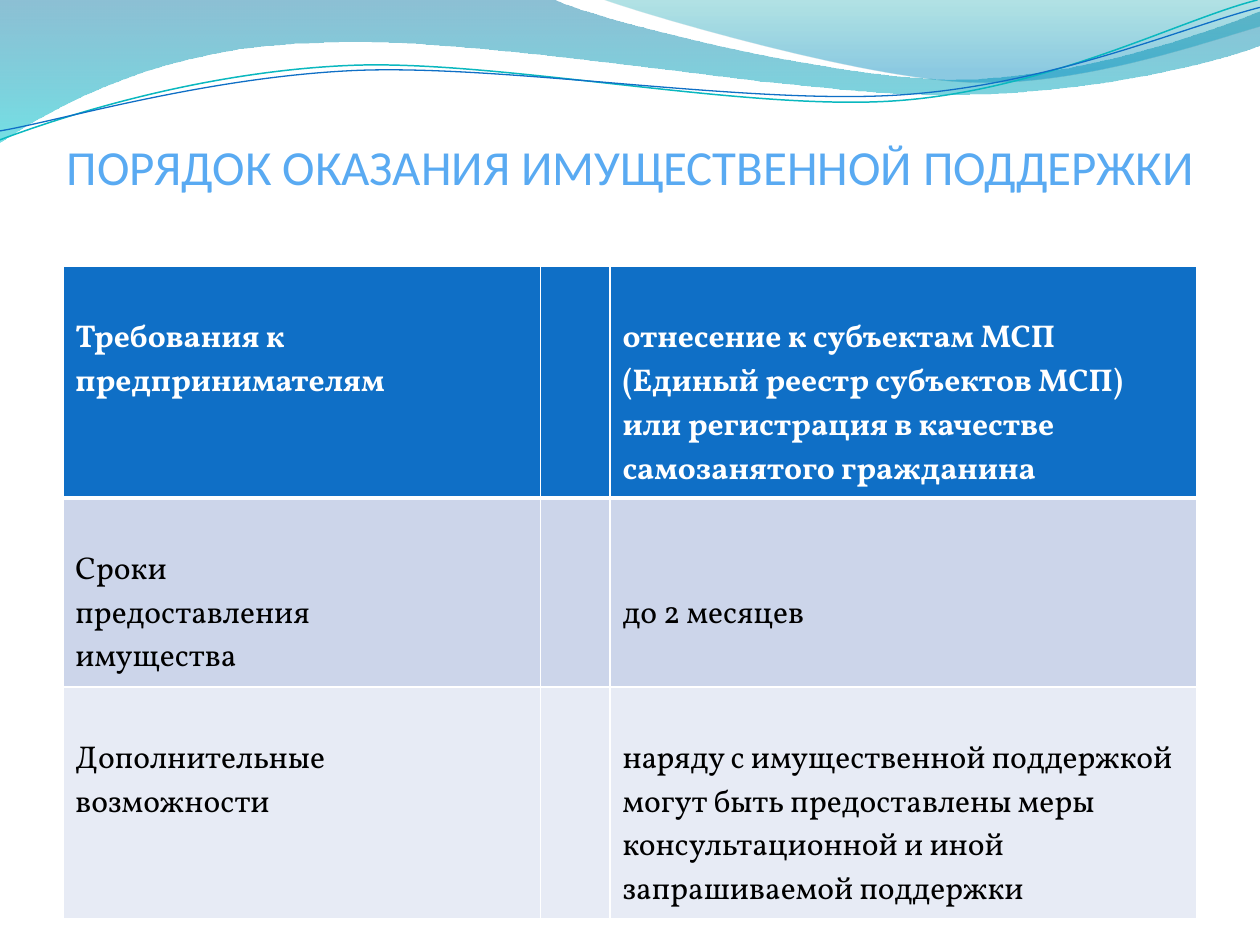
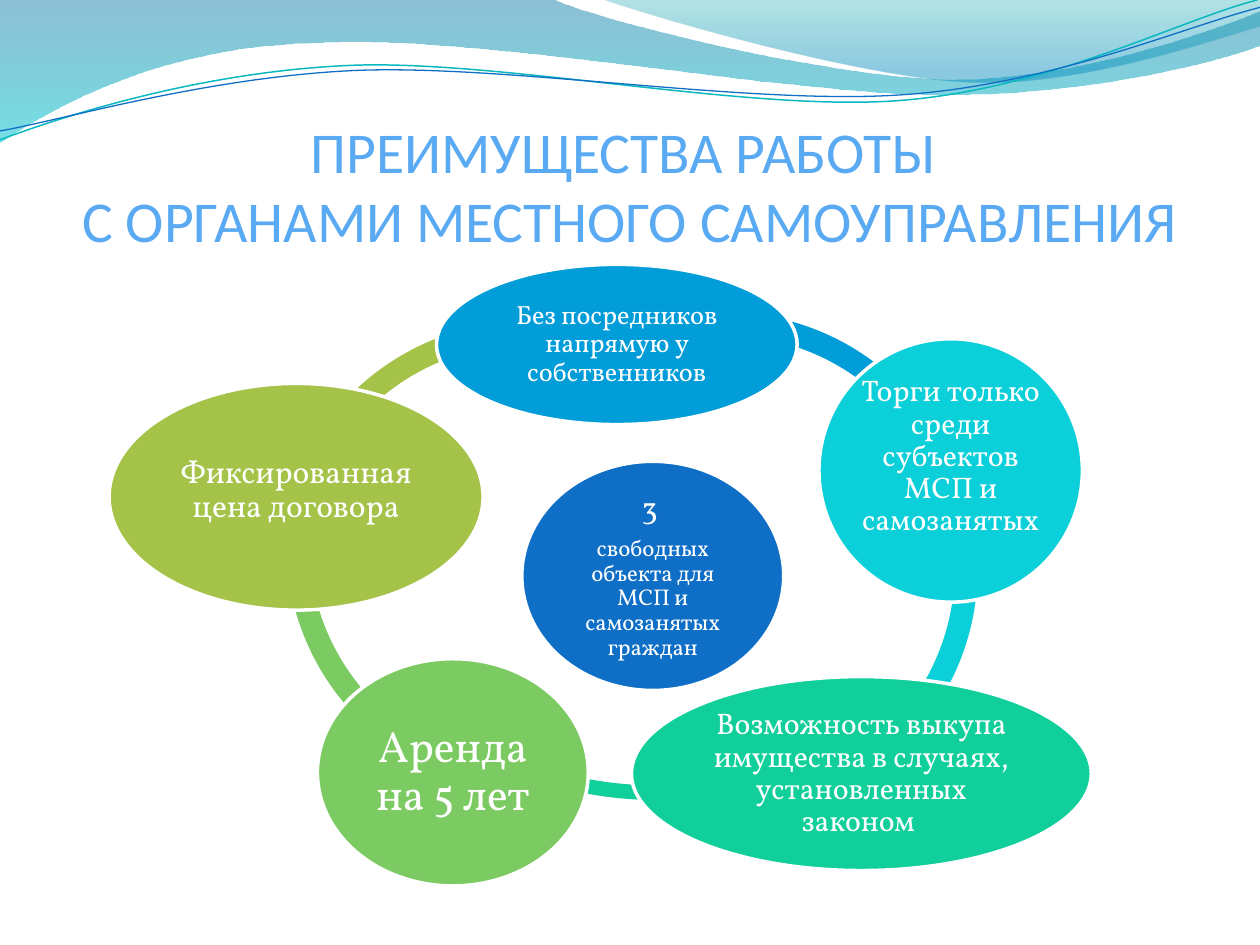
"""Build two slides on municipal property support for small businesses."""
from dataclasses import dataclass
from typing import NamedTuple

from lxml import etree
from pptx import Presentation
from pptx import util as u
from pptx.dml import color
from pptx.enum import shapes, text
from pptx.oxml import ns

WHITE, BLACK = "FFFFFF", "000000"
BLUE, TITLE_BLUE = "0F6FC6", "59AAF2"
AZURE, CYAN, EMERALD, GREEN, OLIVE = "009DD9", "0BD0D9", "10CF9B", "7CCA62", "A5C249"
TITLE_FONT, BODY_FONT = "Calibri", "Vollkorn"
ARC_THICKNESS = 0.046
CELL_MARGIN, CELL_LINE = 0.13, 0.9


class Stop(NamedTuple):
    """A gradient stop with its opacity in percent."""
    position: float
    hue: str
    opacity: int


@dataclass
class Wave:
    """A header curve: pairs are straight steps, sixes are cubic curves."""
    start: tuple
    steps: list
    gradient: tuple = ()
    stroke: str = ""
    weight: float = 0


@dataclass
class Arc:
    """A piece of the ring between two benefits."""
    hue: str
    left: float
    top: float
    begin: float
    end: float
    width: float = 10.03
    height: float = 10.03


@dataclass
class Benefit:
    """An oval with its wording and one font size per paragraph."""
    wording: str
    sizes: tuple
    hue: str
    box: tuple
    inset: float = 0.05
    lift: float = 0


@dataclass
class Requirement:
    """A table row with the number of lines left free above its answer."""
    topic: str
    answer: str
    fill: str
    height: float
    ink: str = BLACK
    bold: bool = False
    answer_lead: int = 1


WAVES = [
    Wave((0, 0), [(11.18, 0), (12.09, 0.43, 16.87, 1.6, 19.25, 1.6),
                  (21.67, 1.6, 24.33, 0.66, 25.4, 0.23), (25.4, 0.91),
                  (24.97, 1.12, 22.1, 1.93, 18.95, 1.91),
                  (15.8, 1.91, 9.7, 0.71, 6.53, 0.86),
                  (3.28, 0.91, 1.17, 2.11, 0, 2.87)],
         gradient=(Stop(0, "0074A1", 45), Stop(1, "00C6CF", 55))),
    Wave((12.17, 0), [(12.93, 0.28, 17.32, 1.57, 19.53, 1.65),
                      (21.74, 1.75, 24.41, 0.81, 25.4, 0.53), (25.4, 0)],
         gradient=(Stop(0, "00A1A9", 30), Stop(0.8, "008BBF", 45))),
    Wave((0, 2.82), [(1.22, 2.36, 4.01, 1.45, 7.04, 1.32),
                     (10.03, 1.19, 15.06, 2.26, 18.11, 2.03),
                     (21.16, 1.8, 23.83, 0.38, 25.35, 0)],
         stroke="0AB8BF", weight=0.85),
    Wave((0, 2.64), [(1.19, 2.44, 4.17, 1.55, 7.19, 1.42),
                     (10.24, 1.3, 15.16, 2.13, 18.21, 1.91),
                     (21.23, 1.7, 23.9, 0.53, 25.4, 0.15)],
         stroke=BLUE, weight=0.75),
]

REQUIREMENTS = [
    Requirement("Требования к предпринимателям",
                "отнесение к субъектам МСП (Единый реестр субъектов МСП) "
                "или регистрация в качестве самозанятого гражданина",
                BLUE, 4.67, ink=WHITE, bold=True),
    Requirement("Сроки\nпредоставления\nимущества", "до 2 месяцев",
                "CCD5EA", 3.81, answer_lead=2),
    Requirement("Дополнительные\nвозможности",
                "наряду с имущественной поддержкой могут быть предоставлены меры "
                "консультационной и иной запрашиваемой поддержки",
                "E7EBF5", 4.67),
]

RING = [
    Arc(OLIVE, 5.61, 6.48, 118.62, 174.9),
    Arc(GREEN, 5.77, 5.94, 65.78, 114.62),
    Arc(EMERALD, 8.23, 9.7, 19.85, 88.27, height=6.43),
    Arc(CYAN, 9.68, 6.45, 201.6, 34.22),
    Arc(AZURE, 9.6, 6.3, 146.06, 202.69),
]

BENEFITS = [
    Benefit("3 \nсвободных объекта для МСП и самозанятых граждан", (18, 13),
            BLUE, (10.52, 9.3, 5.28, 4.62), inset=0.08),
    Benefit("Без посредников напрямую у собственников", (15,),
            AZURE, (8.8, 5.33, 7.27, 3.23)),
    Benefit("Торги только среди субъектов МСП и самозанятых", (17,),
            CYAN, (16.51, 6.83, 5.31, 5.31), lift=0.56),
    Benefit("Возможность выкупа имущества в случаях, установленных законом ", (17,),
            EMERALD, (12.73, 13.64, 9.27, 3.91)),
    Benefit("Аренда на 5 лет", (25,), GREEN, (6.4, 13.28, 5.46, 4.58), inset=0.08),
    Benefit("Фиксированная цена договора", (18,),
            OLIVE, (2.2, 7.73, 7.54, 4.57), inset=0.03, lift=0.25),
]


def rgb(hue: str) -> color.RGBColor:
    """Turn a hex string into a colour."""
    return color.RGBColor.from_string(hue)


def cm(*lengths: float) -> list:
    """Turn centimetres into lengths."""
    return [u.Cm(length) for length in lengths]


def paint(target, hue: str) -> None:
    """Fill a shape or a cell with one colour."""
    target.fill.solid()
    target.fill.fore_color.rgb = rgb(hue)


def style(paragraph, font: str, size: float, hue: str, bold: bool = False) -> None:
    """Format every run of a paragraph."""
    for run in paragraph.runs:
        run.font.name, run.font.size, run.font.bold = font, u.Pt(size), bold
        run.font.color.rgb = rgb(hue)


def set_margins(holder, left: float, top: float, right: float, bottom: float) -> None:
    """Set the four inner margins of a text frame or a cell."""
    holder.margin_left, holder.margin_top, holder.margin_right, holder.margin_bottom = cm(
        left, top, right, bottom)


def bend(curve, steps: list) -> None:
    """Turn each three segments of a cubic step into one Bezier curve."""
    segments = iter(list(curve._element.iter(ns.qn("a:lnTo"))))
    for step in steps:
        group = [next(segments) for _ in range(len(step) // 2)]
        if len(group) == 3:
            bezier = etree.Element(ns.qn("a:cubicBezTo"))
            group[0].addprevious(bezier)
            for segment in group:
                bezier.append(segment[0])
                segment.getparent().remove(segment)


def draw_wave(slide, wave: Wave):
    """Draw a filled or a stroked header wave."""
    points = [tuple(cm(*step[i:i + 2])) for step in wave.steps for i in range(0, len(step), 2)]
    builder = slide.shapes.build_freeform(*cm(*wave.start), scale=1.0)
    builder.add_line_segments(points, close=bool(wave.gradient))
    curve = builder.convert_to_shape()
    bend(curve, wave.steps)
    curve.shadow.inherit = False
    if not wave.gradient:
        curve.fill.background()
        curve.line.color.rgb = rgb(wave.stroke)
        curve.line.width = u.Pt(wave.weight)
        return curve
    curve.line.fill.background()
    curve.fill.gradient()
    curve.fill.gradient_angle = 270
    for slot, stop in zip(curve.fill.gradient_stops, wave.gradient):
        slot.position = stop.position
        slot.color.rgb = rgb(stop.hue)
    for tint, stop in zip(curve._element.iter(ns.qn("a:srgbClr")), wave.gradient):
        etree.SubElement(tint, ns.qn("a:alpha"), val=str(stop.opacity * 1000))
    return curve


def share_waves(slide) -> None:
    """Draw the header waves and hand them to the layout of the slide."""
    for wave in WAVES:
        slide.slide_layout.shapes._spTree.append(draw_wave(slide, wave)._element)


def start_slide(deck, heading: str, size: float, height: float):
    """Add a slide with its title."""
    slide = deck.slides.add_slide(deck.slide_layouts[6])
    frame = slide.shapes.add_textbox(*cm(1.27, 1.95, 22.86, height)).text_frame
    frame.word_wrap = True
    frame.vertical_anchor = text.MSO_ANCHOR.BOTTOM
    set_margins(frame, 0, 0.13, 0, 0)
    frame.text = heading
    frame.paragraphs[0].alignment = text.PP_ALIGN.CENTER
    style(frame.paragraphs[0], TITLE_FONT, size, TITLE_BLUE)
    return slide


def add_borders(cell, top: float, bottom: float) -> None:
    """Give a cell white borders, one point wide at the sides."""
    properties = cell._tc.get_or_add_tcPr()
    for index, (side, weight) in enumerate(zip("LRTB", (1, 1, top, bottom))):
        border = etree.Element(ns.qn(f"a:ln{side}"), w=str(u.Pt(weight)))
        fill = etree.SubElement(border, ns.qn("a:solidFill"))
        etree.SubElement(fill, ns.qn("a:srgbClr"), val=WHITE)
        properties.insert(index, border)


def draw_requirements(slide) -> None:
    """Draw the table of requirements."""
    total = sum(requirement.height for requirement in REQUIREMENTS)
    table = slide.shapes.add_table(len(REQUIREMENTS), 3, *cm(1.27, 5.37, 22.86, total)).table
    for column, width in zip(table.columns, cm(9.63, 1.4, 11.83)):
        column.width = width
    for number, requirement in enumerate(REQUIREMENTS):
        table.rows[number].height = u.Cm(requirement.height)
        entries = ((requirement.topic, 1), ("", 0),
                   (requirement.answer, requirement.answer_lead))
        for cell, (wording, lead) in zip(table.rows[number].cells, entries):
            paint(cell, requirement.fill)
            add_borders(cell, 3 if number == 1 else 1, 3 if number == 0 else 1)
            set_margins(cell, 0.25, CELL_MARGIN + lead * CELL_LINE, 0.25, CELL_MARGIN)
            cell.text_frame.text = wording
            for paragraph in cell.text_frame.paragraphs:
                style(paragraph, BODY_FONT, 18, requirement.ink, requirement.bold)


def draw_arc(slide, arc: Arc) -> None:
    """Draw one piece of the ring."""
    piece = slide.shapes.add_shape(shapes.MSO_SHAPE.BLOCK_ARC,
                                   *cm(arc.left, arc.top, arc.width, arc.height))
    piece.shadow.inherit = False
    for index, value in enumerate((arc.begin, arc.end, ARC_THICKNESS)):
        piece.adjustments[index] = value
    paint(piece, arc.hue)
    piece.line.fill.background()


def draw_benefit(slide, benefit: Benefit) -> None:
    """Draw one oval with its wording."""
    oval = slide.shapes.add_shape(shapes.MSO_SHAPE.OVAL, *cm(*benefit.box))
    oval.shadow.inherit = False
    paint(oval, benefit.hue)
    oval.line.color.rgb = rgb(WHITE)
    oval.line.width = u.Pt(2)
    frame = oval.text_frame
    frame.word_wrap = True
    frame.vertical_anchor = text.MSO_ANCHOR.MIDDLE
    inset = benefit.inset
    set_margins(frame, inset, inset, inset, inset + benefit.lift)
    frame.text = benefit.wording
    for paragraph, size in zip(frame.paragraphs, benefit.sizes):
        paragraph.alignment = text.PP_ALIGN.CENTER
        paragraph.line_spacing = 0.9
        paragraph.space_after = u.Pt(size * 0.35)
        style(paragraph, BODY_FONT, size, WHITE)


def main() -> None:
    """Build and save the deck."""
    deck = Presentation()
    deck.slide_width, deck.slide_height = cm(25.4, 19.05)
    order = start_slide(deck, "ПОРЯДОК ОКАЗАНИЯ ИМУЩЕСТВЕННОЙ ПОДДЕРЖКИ", 28, 1.98)
    share_waves(order)
    draw_requirements(order)
    advantages = start_slide(
        deck, "ПРЕИМУЩЕСТВА РАБОТЫ \vС ОРГАНАМИ МЕСТНОГО САМОУПРАВЛЕНИЯ", 33, 3.17)
    for arc in RING:
        draw_arc(advantages, arc)
    for benefit in BENEFITS:
        draw_benefit(advantages, benefit)
    deck.save("out.pptx")


if __name__ == "__main__":
    main()
